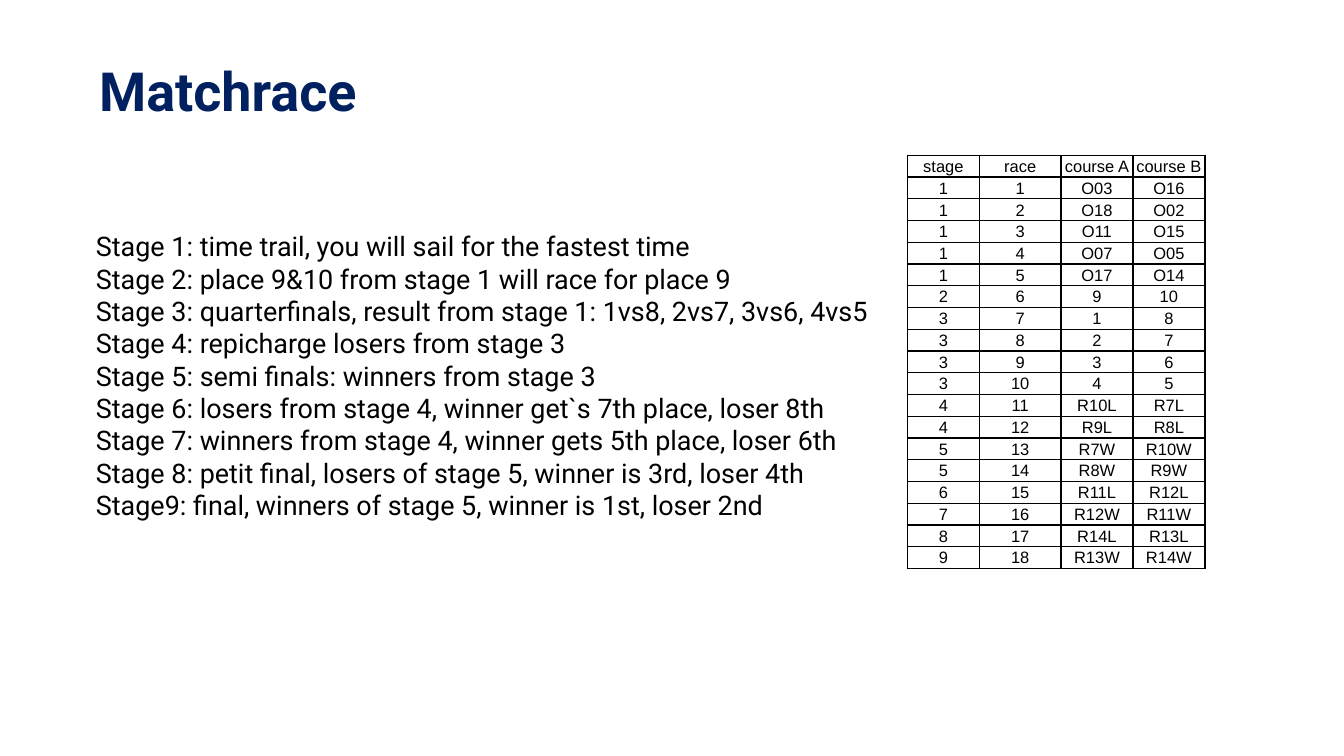
"""Build the Matchrace slide: stage rules beside the race schedule."""
from dataclasses import dataclass

from lxml import etree
from pptx import Presentation
from pptx import util as u
from pptx.dml.color import RGBColor
from pptx.enum import text
from pptx.oxml import ns

TITLE = "Matchrace"
STAGES = [
    "Stage 1: time trail, you will sail for the fastest time",
    "Stage 2: place 9&10 from stage 1 will race for place 9",
    "Stage 3: quarterfinals, result from stage 1: 1vs8, 2vs7, 3vs6, 4vs5",
    "Stage 4: repicharge losers from stage 3",
    "Stage 5: semi finals: winners from stage 3",
    "Stage 6: losers from stage 4, winner get`s 7th place, loser 8th",
    "Stage 7: winners from stage 4, winner gets 5th place, loser 6th",
    "Stage 8: petit final, losers of stage 5, winner is 3rd, loser 4th",
    "Stage9: final, winners of stage 5, winner is 1st, loser 2nd",
]
HEADINGS = ("stage", "race", "course A", "course B")
PAIRINGS = [
    (1, "O03", "O16"), (1, "O18", "O02"), (1, "O11", "O15"),
    (1, "O07", "O05"), (1, "O17", "O14"), (2, "9", "10"),
    (3, "1", "8"), (3, "2", "7"), (3, "3", "6"), (3, "4", "5"),
    (4, "R10L", "R7L"), (4, "R9L", "R8L"),
    (5, "R7W", "R10W"), (5, "R8W", "R9W"),
    (6, "R11L", "R12L"), (7, "R12W", "R11W"),
    (8, "R14L", "R13L"), (9, "R13W", "R14W"),
]
SCHEDULE = [HEADINGS] + [
    (stage, race, course_a, course_b)
    for race, (stage, course_a, course_b) in enumerate(PAIRINGS, 1)
]

SLIDE_W, SLIDE_H = 12.47, 7.01
TITLE_BOX = (0.87, 0.54, 10.33, 0.7)
STAGES_BOX = (0.84, 2.08, 7.37, 2.85)
SCHEDULE_BOX = (8.42, 1.44, 2.76, 3.83)
COLUMN_WEIGHTS = (0.67, 0.76, 0.67, 0.67)


@dataclass(frozen=True)
class Theme:
    heading: RGBColor = RGBColor(0x00, 0x20, 0x60)
    ink: RGBColor = RGBColor(0, 0, 0)
    text_font: str = "Roboto"
    table_font: str = "Arial"
    title_size: int = 36
    stage_size: int = 18
    table_size: int = 11
    rule_width: int = 1


THEME = Theme()


def set_font(paragraph, name, size, colour, bold=False):
    font = paragraph.font
    font.name, font.size, font.bold = name, u.Pt(size), bold
    font.color.rgb = colour


def place(holder, box):
    holder.left, holder.top, holder.width, holder.height = map(u.Inches, box)
    frame = holder.text_frame
    frame.margin_left = frame.margin_right = u.Inches(0.05)
    frame.margin_top = frame.margin_bottom = u.Inches(0.05)
    frame.vertical_anchor = text.MSO_ANCHOR.TOP
    frame.auto_size = text.MSO_AUTO_SIZE.NONE
    frame.word_wrap = True
    return frame


def rule_cell(cell):
    properties = cell._tc.get_or_add_tcPr()
    for side in "LRTB":
        line = etree.SubElement(properties, ns.qn(f"a:ln{side}"),
                                w=str(u.Pt(THEME.rule_width)))
        fill = etree.SubElement(line, ns.qn("a:solidFill"))
        etree.SubElement(fill, ns.qn("a:srgbClr"), val=str(THEME.ink))


def add_title(slide):
    frame = place(slide.shapes.title, TITLE_BOX)
    frame.text = TITLE
    heading = frame.paragraphs[0]
    heading.alignment = text.PP_ALIGN.LEFT
    heading.line_spacing = 0.93
    set_font(heading, THEME.text_font, THEME.title_size, THEME.heading, True)


def add_stages(slide):
    frame = place(slide.placeholders[1], STAGES_BOX)
    frame.text = "\n".join(STAGES)
    for stage in frame.paragraphs:
        stage.space_before = u.Pt(0)
        properties = stage._p.get_or_add_pPr()
        properties.set("marL", "0")
        properties.set("indent", "0")
        etree.SubElement(properties, ns.qn("a:buNone"))
        set_font(stage, THEME.text_font, THEME.stage_size, THEME.ink)


def add_schedule(slide):
    left, top, width, height = map(u.Inches, SCHEDULE_BOX)
    schedule = slide.shapes.add_table(
        len(SCHEDULE), len(HEADINGS), left, top, width, height).table
    schedule.first_row = schedule.horz_banding = False
    for column, weight in zip(schedule.columns, COLUMN_WEIGHTS):
        column.width = int(width * weight / sum(COLUMN_WEIGHTS))
    for row, entries in enumerate(SCHEDULE):
        for column, entry in enumerate(entries):
            cell = schedule.cell(row, column)
            cell.text = str(entry)
            cell.margin_left = cell.margin_right = u.Inches(0.01)
            cell.margin_top = cell.margin_bottom = u.Inches(0.01)
            cell.vertical_anchor = text.MSO_ANCHOR.BOTTOM
            rule_cell(cell)
            cell.fill.background()
            label = cell.text_frame.paragraphs[0]
            label.alignment = text.PP_ALIGN.CENTER
            set_font(label, THEME.table_font, THEME.table_size, THEME.ink)


def main():
    deck = Presentation()
    deck.slide_width, deck.slide_height = u.Inches(SLIDE_W), u.Inches(SLIDE_H)
    slide = deck.slides.add_slide(deck.slide_layouts[1])
    add_title(slide)
    add_stages(slide)
    add_schedule(slide)
    deck.save("out.pptx")


if __name__ == "__main__":
    main()
